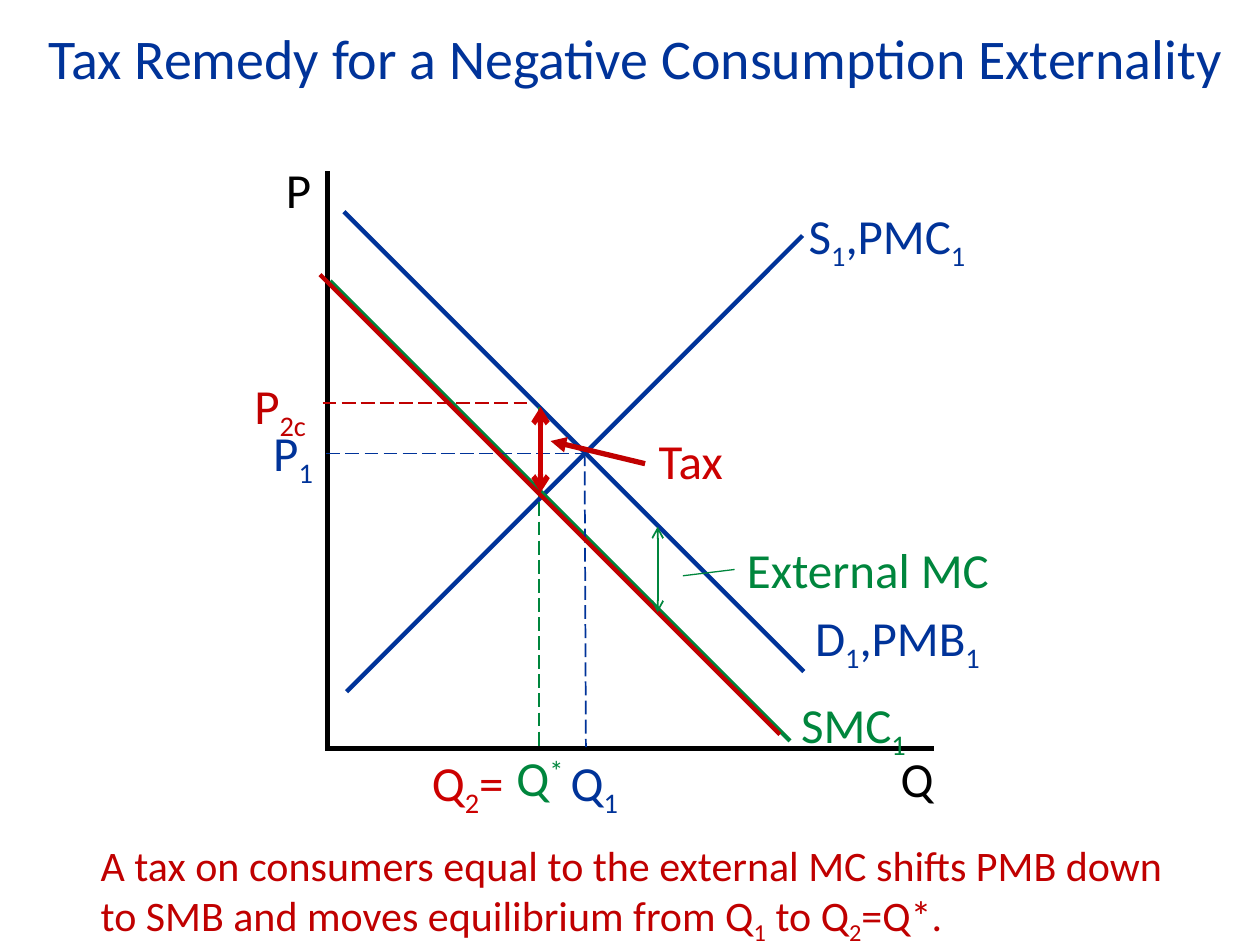
from dataclasses import dataclass

from lxml import etree
from pptx import Presentation
from pptx import util as u
from pptx.dml import color
from pptx.enum import dml, shapes, text
from pptx.oxml import ns


@dataclass(frozen=True)
class Theme:
    """Colours, font and type sizes of the deck."""
    font: str = "Calibri"
    private: str = "003399"
    social: str = "00863D"
    tax: str = "C00000"
    tax_label: str = "CC0000"
    axis: str = "000000"
    title: int = 32
    label: int = 28
    caption: int = 24
    curve: float = 2.5
    bold: float = 3
    thin: float = 1
    hair: float = 0.75


def write(frame, wording, *, colour, size, font, spacing=None, align=None,
          anchor=text.MSO_ANCHOR.TOP, shift=-25):
    """Fill a frame; every second piece between bars is raised or lowered."""
    frame.word_wrap = True
    frame.auto_size = text.MSO_AUTO_SIZE.SHAPE_TO_FIT_TEXT
    frame.vertical_anchor = anchor
    para = frame.paragraphs[0]
    para.alignment = align
    para.line_spacing = spacing
    for index, piece in enumerate(wording.split("|")):
        if not piece:
            continue
        span = para.add_run()
        span.text = piece
        span.font.name = font
        span.font.size = u.Pt(size)
        span.font.color.rgb = color.RGBColor.from_string(colour)
        if index % 2:
            span._r.get_or_add_rPr().set("baseline", str(shift * 1000))


class Diagram:
    """Holds the theme and the current page."""

    def __init__(self, page, theme):
        self.page = page
        self.theme = theme

    def title(self, wording, left, top, width, height):
        """Place and fill the title placeholder."""
        box = self.page.shapes.title
        box.left, box.top = u.Inches(left), u.Inches(top)
        box.width, box.height = u.Inches(width), u.Inches(height)
        write(box.text_frame, wording, colour=self.theme.private,
              size=self.theme.title, font=self.theme.font,
              align=text.PP_ALIGN.CENTER, anchor=text.MSO_ANCHOR.MIDDLE)

    def label(self, wording, left, top, width, height, colour, size=None, **style):
        """Add a text box."""
        box = self.page.shapes.add_textbox(
            *map(u.Inches, (left, top, width, height)))
        write(box.text_frame, wording, colour=colour, font=self.theme.font,
              size=size or self.theme.label, **style)

    def line(self, start, end, colour, weight, dashed=False, head=None, tail=None):
        """Add a straight line with optional dashes and arrowheads."""
        link = self.page.shapes.add_connector(
            shapes.MSO_CONNECTOR.STRAIGHT, *map(u.Inches, (*start, *end)))
        link.line.color.rgb = color.RGBColor.from_string(colour)
        link.line.width = u.Pt(weight)
        if dashed:
            link.line.dash_style = dml.MSO_LINE.LONG_DASH
        outline = link.line._get_or_add_ln()
        for tag, kind in (("a:headEnd", head), ("a:tailEnd", tail)):
            if kind:
                etree.SubElement(outline, ns.qn(tag), type=kind)
        etree.SubElement(link.element.spPr, ns.qn("a:effectLst"))


def main():
    """Build the tax remedy page."""
    deck = Presentation()
    deck.slide_width, deck.slide_height = u.Inches(10), u.Inches(7.5)
    theme = Theme()
    draw = Diagram(deck.slides.add_slide(deck.slide_layouts[5]), theme)
    blue, green, red = theme.private, theme.social, theme.tax

    draw.title("Tax Remedy for a Negative Consumption Externality",
               0.17, 0.13, 9.75, 0.64)

    for start, end, colour in (
        ((2.75, 5.49), (6.37, 1.87), blue),
        ((2.6, 1.36), (2.6, 5.96), theme.axis),
        ((2.61, 5.94), (7.41, 5.94), theme.axis),
        ((2.73, 1.68), (6.38, 5.33), blue),
        ((2.62, 2.23), (6.27, 5.88), green),
    ):
        draw.line(start, end, colour, theme.curve)

    for start, end, colour in (
        ((4.64, 3.59), (4.65, 5.93), blue),
        ((4.28, 3.23), (4.28, 5.93), green),
        ((2.59, 3.6), (4.64, 3.6), blue),
        ((2.56, 3.2), (4.22, 3.2), red),
    ):
        draw.line(start, end, colour, theme.thin, dashed=True)

    draw.line((2.54, 2.18), (6.19, 5.83), red, theme.curve)
    draw.line((5.42, 4.57), (5.83, 4.52), green, theme.hair)
    draw.line((5.12, 3.68), (4.37, 3.5), red, theme.bold, tail="triangle")
    for x, top, colour, weight in ((4.29, 3.23, theme.tax_label, theme.bold),
                                   (5.22, 4.18, green, theme.thin)):
        draw.line((x, top), (x, top + 0.68), colour, weight,
                  head="arrow", tail="arrow")

    for wording, left, top, width, colour in (
        ("D|1|,PMB|1", 6.37, 4.77, 2.58, blue),
        ("Q", 7.05, 5.89, 0.51, theme.axis),
        ("S|1|,PMC|1", 6.32, 1.58, 1.5, blue),
        ("SMC|1", 6.26, 5.46, 1.2, green),
        ("External MC", 5.83, 4.23, 2.19, green),
    ):
        draw.label(wording, left, top, width, 0.57, colour)

    for wording, left, top, width, colour in (
        ("P", 2.17, 1.31, 0.45, theme.axis),
        ("Q|1", 4.43, 5.97, 0.75, blue),
        ("P|1", 2.07, 3.35, 0.58, blue),
        ("Tax", 5.13, 3.46, 2.27, theme.tax_label),
        ("Q|2|=", 3.33, 5.97, 0.93, theme.tax_label),
        ("P|2c", 1.92, 2.98, 0.7, red),
    ):
        draw.label(wording, left, top, width, 0.49, colour, spacing=0.8)
    draw.label("Q|*", 4, 5.97, 0.75, 0.49, green, spacing=0.8, shift=30)

    draw.label("A tax on consumers equal to the external MC shifts PMB down to SMB "
               "and moves equilibrium from Q|1| to Q|2|=Q*.",
               0.7, 6.61, 8.72, 0.91, red, size=theme.caption)
    deck.save("out.pptx")


if __name__ == "__main__":
    main()
